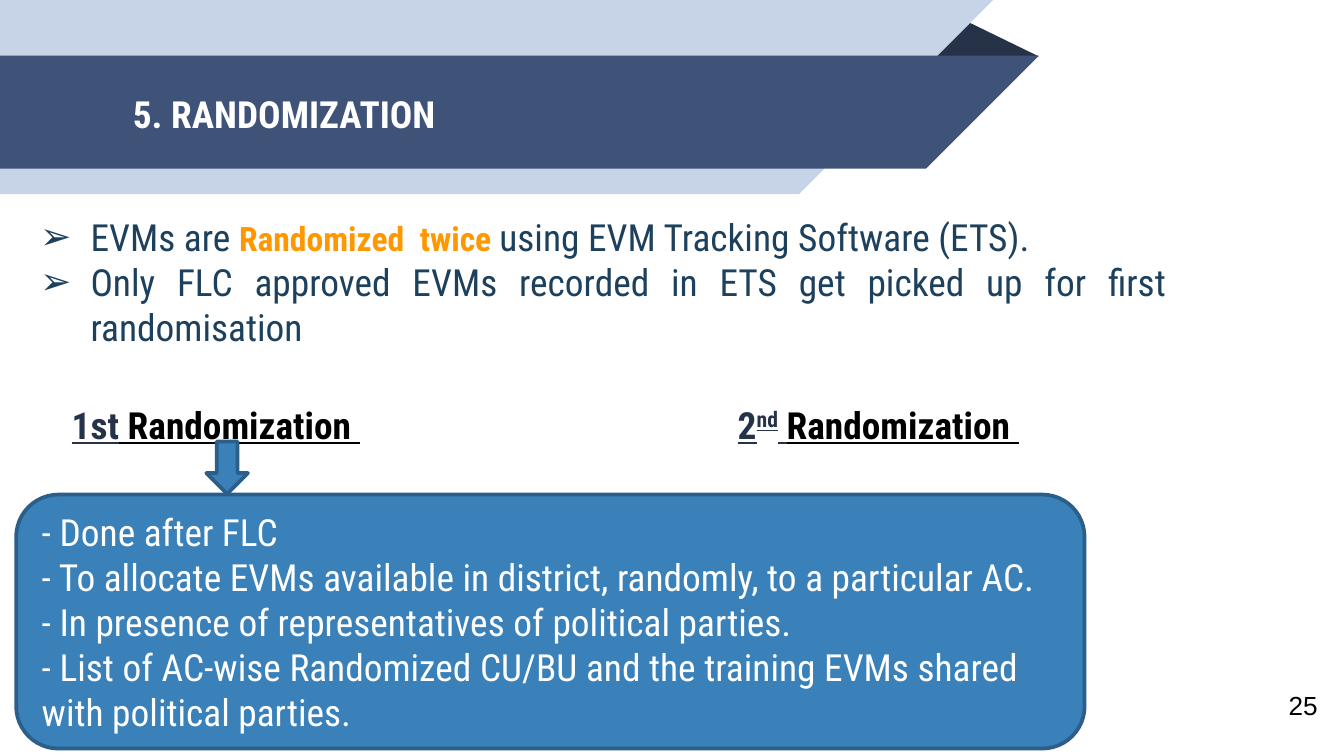
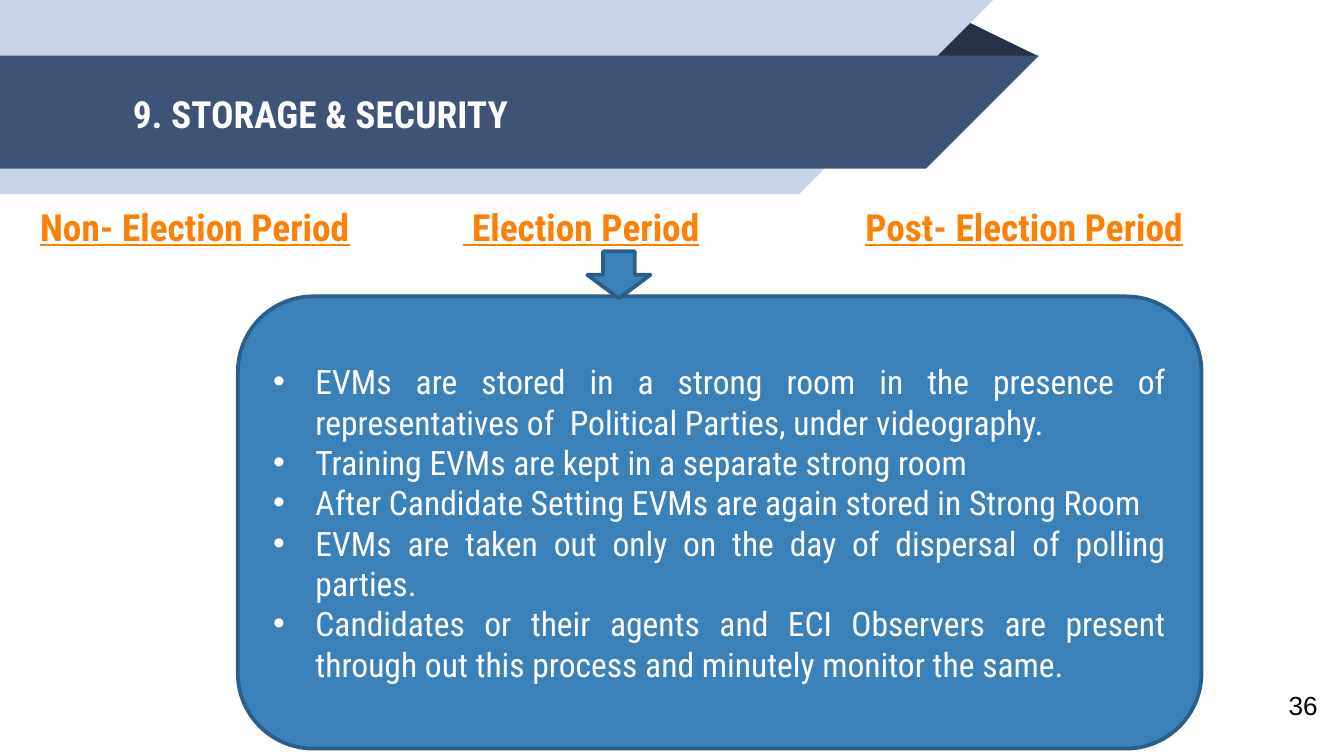
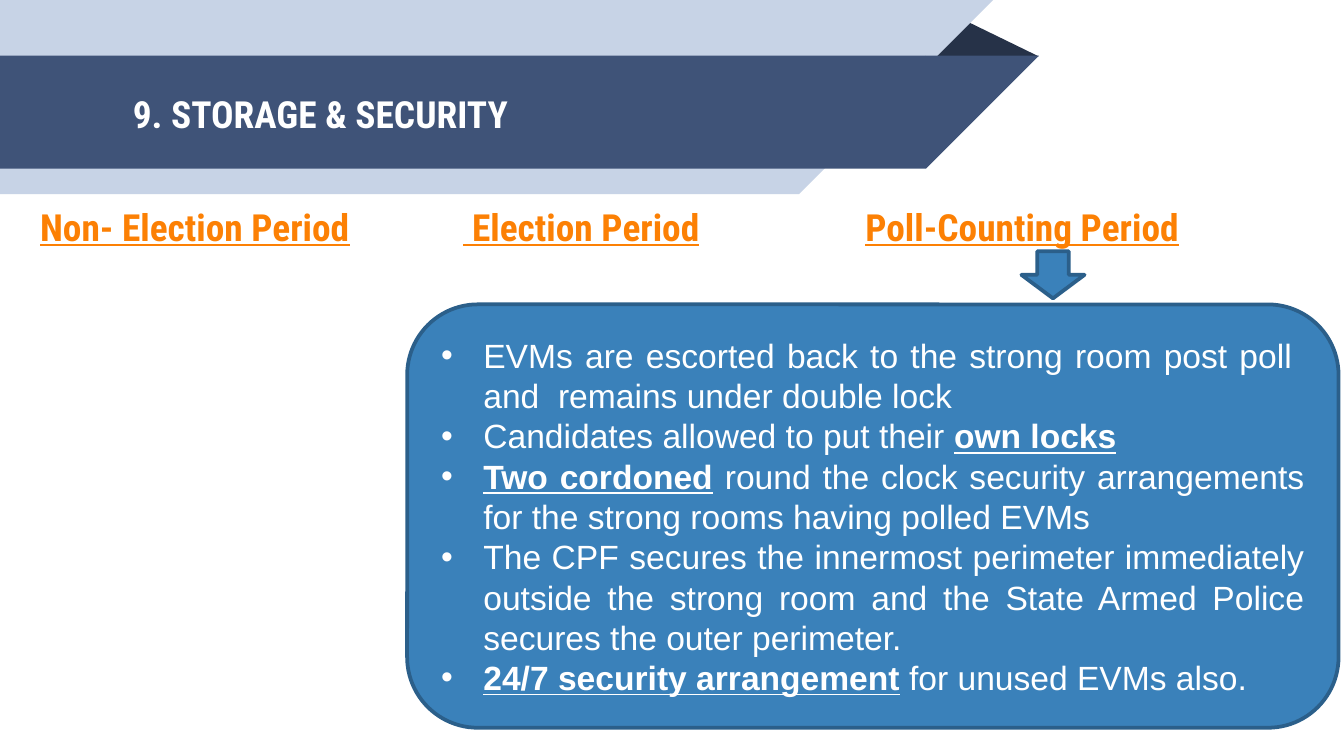
from lxml import etree
from pptx import Presentation
from pptx.dml.color import RGBColor
from pptx.enum.shapes import MSO_SHAPE
from pptx.enum.text import MSO_ANCHOR, PP_ALIGN
from pptx.oxml.ns import qn
from pptx.util import Pt

RECTANGLE, TRIANGLE = MSO_SHAPE.RECTANGLE, MSO_SHAPE.ISOSCELES_TRIANGLE
CORNER, PANEL, ARROW = MSO_SHAPE.RIGHT_TRIANGLE, MSO_SHAPE.ROUNDED_RECTANGLE, MSO_SHAPE.DOWN_ARROW
TOP, MIDDLE = MSO_ANCHOR.TOP, MSO_ANCHOR.MIDDLE
LEFT, JUSTIFY = PP_ALIGN.LEFT, PP_ALIGN.JUSTIFY

EMU_PER_PX = 4572  # 200 px to the inch
SLIDE_SIZE = (2000, 1125)
HEADER_BOX = (0, 0, 1546, 289)
PERIODS_BOX = (40, 294, 1906, 88)
NUMBER_BOX = (1898, 1014, 102, 70)
CONDENSED, PLAIN = "Roboto Condensed", "Arial"
COLORS = {
    "fold": "263248", "pale": "C7D3E6", "band": "3F5378",
    "panel": "3A81BA", "outline": "2B5F8A", "white": "FFFFFF",
    "black": "000000", "navy": "1D405D", "amber": "FF9800", "orange": "FC8004",
}
STRONG = {"bold": True, "underline": True}


def px(length):
    return int(length * EMU_PER_PX)


def rgb(name):
    return RGBColor.from_string(COLORS[name])


def style_font(font, size=None, name=None, color=None, bold=None, underline=None):
    if size:
        font.size = Pt(size)
    if name:
        font.name = name
    if color:
        font.color.rgb = rgb(color)
    if bold is not None:
        font.bold = bold
    if underline is not None:
        font.underline = underline


def add_bullet(paragraph, symbol, indent):
    properties = paragraph._p.get_or_add_pPr()
    properties.set("marL", str(px(indent)))
    properties.set("indent", str(-px(indent)))
    etree.SubElement(properties, qn("a:buFont")).set("typeface", PLAIN)
    etree.SubElement(properties, qn("a:buChar")).set("char", symbol)


def write(frame, lines, font, align=LEFT, anchor=TOP, insets=(20, 10), bullet=None):
    """Each line is a string or a list of (text, style) runs; style may hold a baseline."""
    frame.word_wrap = True
    frame.vertical_anchor = anchor
    frame.margin_left = frame.margin_right = px(insets[0])
    frame.margin_top = frame.margin_bottom = px(insets[1])
    for number, line in enumerate(lines):
        paragraph = frame.paragraphs[0] if number == 0 else frame.add_paragraph()
        paragraph.alignment = align
        if bullet:
            add_bullet(paragraph, *bullet)
        style_font(paragraph.font, **font)
        for text, style in [(line, {})] if isinstance(line, str) else line:
            run = paragraph.add_run()
            run.text = text
            style = dict(style)
            baseline = style.pop("baseline", None)
            style_font(run.font, **style)
            if baseline:
                run._r.get_or_add_rPr().set("baseline", str(baseline))


def add_text(slide, box, lines, font, **layout):
    write(slide.shapes.add_textbox(*map(px, box)).text_frame, lines, font, **layout)


def add_block(slide, kind, box, fill, outline=None):
    block = slide.shapes.add_shape(kind, *map(px, box))
    block.shadow.inherit = False
    block.fill.solid()
    block.fill.fore_color.rgb = rgb(fill)
    if outline:
        block.line.color.rgb = rgb(outline)
        block.line.width = Pt(2)
    else:
        block.line.fill.background()
    return block


def add_header(slide, box, title):
    left, top, width, height = box
    # Dark fold behind the ribbon
    fold = add_block(slide, TRIANGLE, (left + width - 170, top + 28, 170, 56), "fold")
    fold.adjustments[0] = 0.324
    # Bands, each ending in a slanted corner as wide as the band is high
    for band_top, body, band_height, color in ((0, 1189, height, "pale"), (83, 1378, 168, "band")):
        y = top + band_top
        add_block(slide, RECTANGLE, (left, y, body, band_height), color)
        corner = add_block(slide, CORNER, (left + body, y, band_height, band_height), color)
        corner.rotation = 90
    add_text(slide, (left + 178, top + 85, 1150, 168), [title],
             dict(size=20, name=CONDENSED, color="white", bold=True),
             anchor=MIDDLE, insets=(20, 20))


def add_page_number(slide, box, number):
    add_text(slide, box, [str(number)], dict(size=14, name=PLAIN, color="black"),
             anchor=MIDDLE, insets=(20, 20))


def add_panel(slide, box, lines, font, **layout):
    panel = add_block(slide, PANEL, box, "panel", "outline")
    write(panel.text_frame, lines, dict(color="white", **font), anchor=MIDDLE, **layout)


def add_arrow(slide, box):
    add_block(slide, ARROW, box, "panel", "outline")


def add_periods(slide, box, names):
    left, top, _, height = box
    for name, offset, width in zip(names, (0, 630, 1228), (740, 582, 678)):
        add_text(slide, (left + offset, top, width, height), [name],
                 dict(size=20, name=CONDENSED, color="orange", **STRONG))


def add_rounds(slide, box):
    left, top, width, height = box
    heading_width = 567
    black = {"color": "black"}
    first = [("1st", {}), (" Randomization ", black)]
    second = [("2", {}), ("nd", {"baseline": 30000}), (" ", {}), ("Randomization ", black)]
    for x, heading in ((left, first), (left + width - heading_width, second)):
        add_text(slide, (x, top, heading_width, height), [heading],
                 dict(size=20, name=CONDENSED, color="fold", **STRONG),
                 align=JUSTIFY, insets=(20, 0))


def build_randomization(slide):
    add_header(slide, HEADER_BOX, "5. RANDOMIZATION")
    add_page_number(slide, NUMBER_BOX, 25)
    add_rounds(slide, (87, 598, 1558, 148))
    add_text(slide, (40, 309, 1716, 222), [
        [("EVMs are ", {}),
         ("Randomized  twice ", dict(size=18, color="amber", bold=True)),
         ("using EVM Tracking Software (ETS).", {})],
        "Only FLC approved EVMs recorded in ETS get picked up for first randomisation",
    ], dict(size=20, name=CONDENSED, color="navy"), align=JUSTIFY, bullet=("➢", 75))
    add_panel(slide, (24, 736, 1590, 378), [
        "- Done after FLC",
        "- To allocate EVMs available in district, randomly, to a particular AC.",
        "- In presence of representatives of political parties.",
        "- List of AC-wise Randomized CU/BU and the training EVMs shared with political parties.",
    ], dict(size=20, name=CONDENSED))
    add_arrow(slide, (307, 657, 62, 78))


def build_storage(slide, last_period, panel_box, lines, font_name, arrow_left, number=None):
    add_header(slide, HEADER_BOX, "9. STORAGE & SECURITY")
    if number:
        add_page_number(slide, NUMBER_BOX, number)
    add_panel(slide, panel_box, lines, dict(size=18, name=font_name),
              align=JUSTIFY, bullet=("•", 63))
    add_periods(slide, PERIODS_BOX, ("Non- Election Period", " Election Period", last_period))
    add_arrow(slide, (arrow_left, 374, 94, 70))


ELECTION_STEPS = [
    "EVMs are stored in a strong room in the presence of representatives of  Political Parties, "
    "under videography. ",
    "Training EVMs are kept in a separate strong room",
    "After Candidate Setting EVMs are again stored in Strong Room ",
    "EVMs are taken out only on the day of dispersal of polling parties.",
    "Candidates or their agents and ECI Observers are present through out this process and "
    "minutely monitor the same.",
]
COUNTING_STEPS = [
    "EVMs are escorted back to the strong room post poll  and  remains under double lock",
    [("Candidates allowed to put their ", {}), ("own locks", STRONG)],
    [("Two cordoned", STRONG),
     (" round the clock security arrangements for the strong rooms having polled EVMs ", {})],
    "The CPF secures the innermost perimeter immediately outside the strong room and the "
    "State Armed Police secures the outer perimeter.",
    [("24/7 security arrangement", STRONG), (" for unused EVMs also. ", {})],
]


def main():
    deck = Presentation()
    deck.slide_width, deck.slide_height = map(px, SLIDE_SIZE)
    blank = deck.slide_layouts[6]
    build_randomization(deck.slides.add_slide(blank))
    build_storage(deck.slides.add_slide(blank), "Post- Election Period",
                  (354, 441, 1434, 673), ELECTION_STEPS, CONDENSED, 874, number=36)
    build_storage(deck.slides.add_slide(blank), "Poll-Counting Period",
                  (606, 453, 1386, 630), COUNTING_STEPS, PLAIN, 1520)
    deck.save("out.pptx")


if __name__ == "__main__":
    main()
